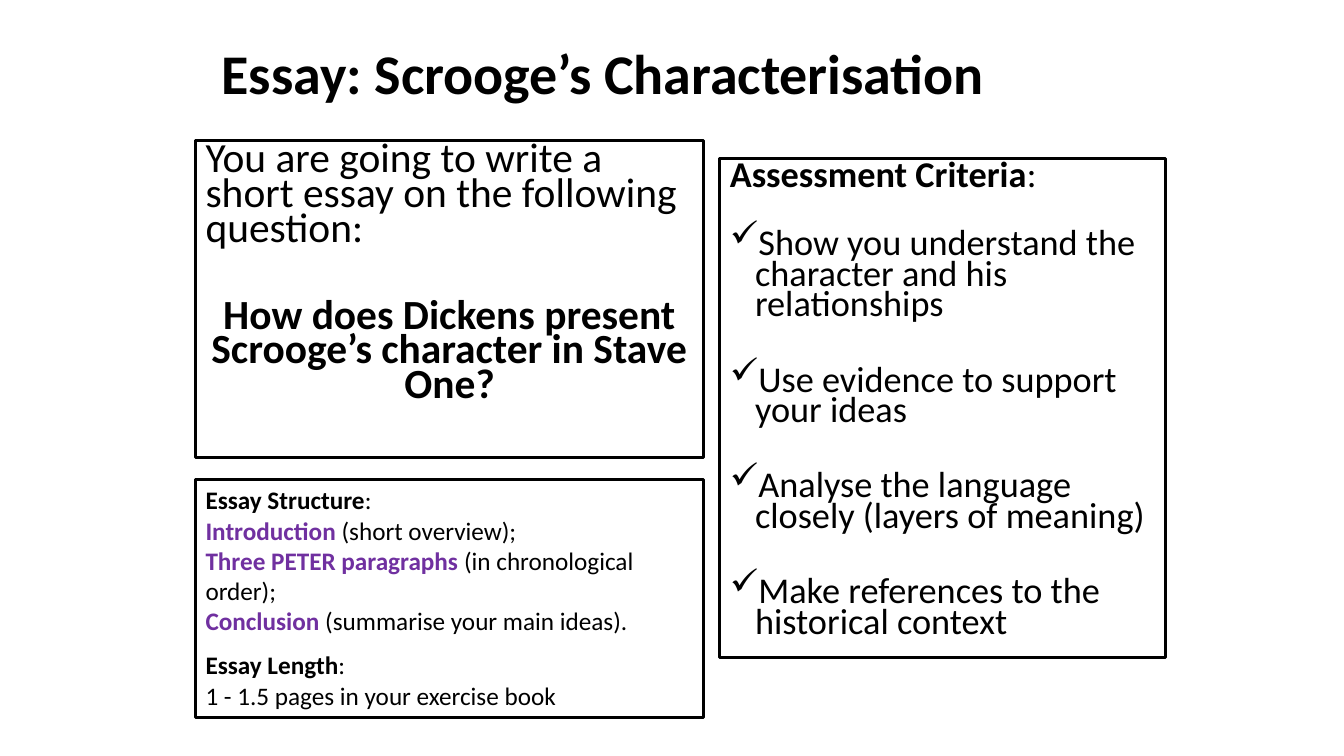
from lxml import etree
from pptx import Presentation
from pptx.dml.color import RGBColor
from pptx.enum.shapes import MSO_SHAPE
from pptx.enum.text import MSO_ANCHOR as Anchor, PP_ALIGN as Align
from pptx.oxml.ns import qn
from pptx.util import Inches, Pt

BLACK, WHITE, PURPLE = "000000", "FFFFFF", "7030A0"
LEFT, WIDTH = 1.94, 5.04  # shared column of the two left panels
BOLD = {"bold": True}
KEY = {"bold": True, "color": PURPLE}


def rgb(value):
    return RGBColor.from_string(value)


def add_para(frame, spans, size, **formats):
    """Fill the empty first paragraph, or append one; spans are (text, font format) pairs."""
    para = frame.paragraphs[0]
    if para.runs:
        para = frame.add_paragraph()
    settings = {"alignment": Align.LEFT, "space_before": Pt(0)} | formats
    for name, value in settings.items():
        setattr(para, name, value)
    for text, style in spans:
        span = para.add_run()
        span.text = text
        look = {"name": "Calibri", "size": Pt(size), "bold": False} | style
        span.font.color.rgb = rgb(look.pop("color", BLACK))
        for name, value in look.items():
            setattr(span.font, name, value)
    return para


def add_tick(para, indent=0.25):
    props = para._p.get_or_add_pPr()
    props.set("marL", str(Inches(indent)))
    props.set("indent", str(Inches(-indent)))
    etree.SubElement(props, qn("a:buChar")).set("char", "✓")


def add_title(page, text):
    box = page.shapes.add_textbox(*map(Inches, (2.1, 0.13, 9.57, 1.25)))
    frame = box.text_frame
    frame.word_wrap = True
    frame.vertical_anchor = Anchor.MIDDLE
    add_para(frame, [(text, BOLD)], 40, line_spacing=0.9)


def add_panel(page, left, top, width, height):
    panel = page.shapes.add_shape(
        MSO_SHAPE.RECTANGLE, *map(Inches, (left, top, width, height)))
    panel.shadow.inherit = False
    panel.fill.solid()
    panel.fill.fore_color.rgb = rgb(WHITE)
    panel.line.color.rgb = rgb(BLACK)
    panel.line.width = Pt(2.25)
    frame = panel.text_frame
    frame.word_wrap = True
    frame.vertical_anchor = Anchor.TOP
    return frame


def add_question(page):
    frame = add_panel(page, LEFT, 1.39, WIDTH, 3.15)
    task = "You are going to write a short essay on the following question:"
    question = "How does Dickens present Scrooge’s character in Stave One?"
    add_para(frame, [(task, {})], 29.6, line_spacing=0.7)
    add_para(frame, [(question, BOLD)], 29.6, line_spacing=0.7,
             alignment=Align.CENTER, space_before=Pt(37))


def add_criteria(page):
    frame = add_panel(page, 7.14, 1.57, 4.42, 4.95)
    add_para(frame, [("Assessment Criteria", BOLD), (":", {})], 25.9, line_spacing=0.7)
    criteria = [
        "Show you understand the character and his relationships",
        "Use evidence to support your ideas",
        "Analyse the language closely (layers of meaning)",
        "Make references to the historical context",
    ]
    for number, text in enumerate(criteria):
        gap = Pt(32 if number else 27)
        add_tick(add_para(frame, [(text, {})], 25.9, line_spacing=0.7, space_before=gap))


def add_structure(page):
    frame = add_panel(page, LEFT, 4.76, WIDTH, 2.36)
    rows = [
        ([("Essay Structure", BOLD), (":", {})], 0),
        ([("Introduction", KEY), (" (short overview);", {})], 0),
        ([("Three PETER paragraphs ", KEY), ("(in chronological order);", {})], 0),
        ([("Conclusion ", KEY), ("(summarise your main ideas).", {})], 0),
        ([("Essay Length", BOLD), (":", {})], 9.8),
        ([("1 - 1.5 pages in your exercise book", {})], 0),
    ]
    for spans, gap in rows:
        add_para(frame, spans, 18, space_before=Pt(gap))


def main():
    deck = Presentation()
    deck.slide_width, deck.slide_height = Inches(13.33), Inches(7.5)
    page = deck.slides.add_slide(deck.slide_layouts[6])
    add_title(page, "Essay: Scrooge’s Characterisation")
    add_question(page)
    add_criteria(page)
    add_structure(page)
    deck.save("out.pptx")


if __name__ == "__main__":
    main()
